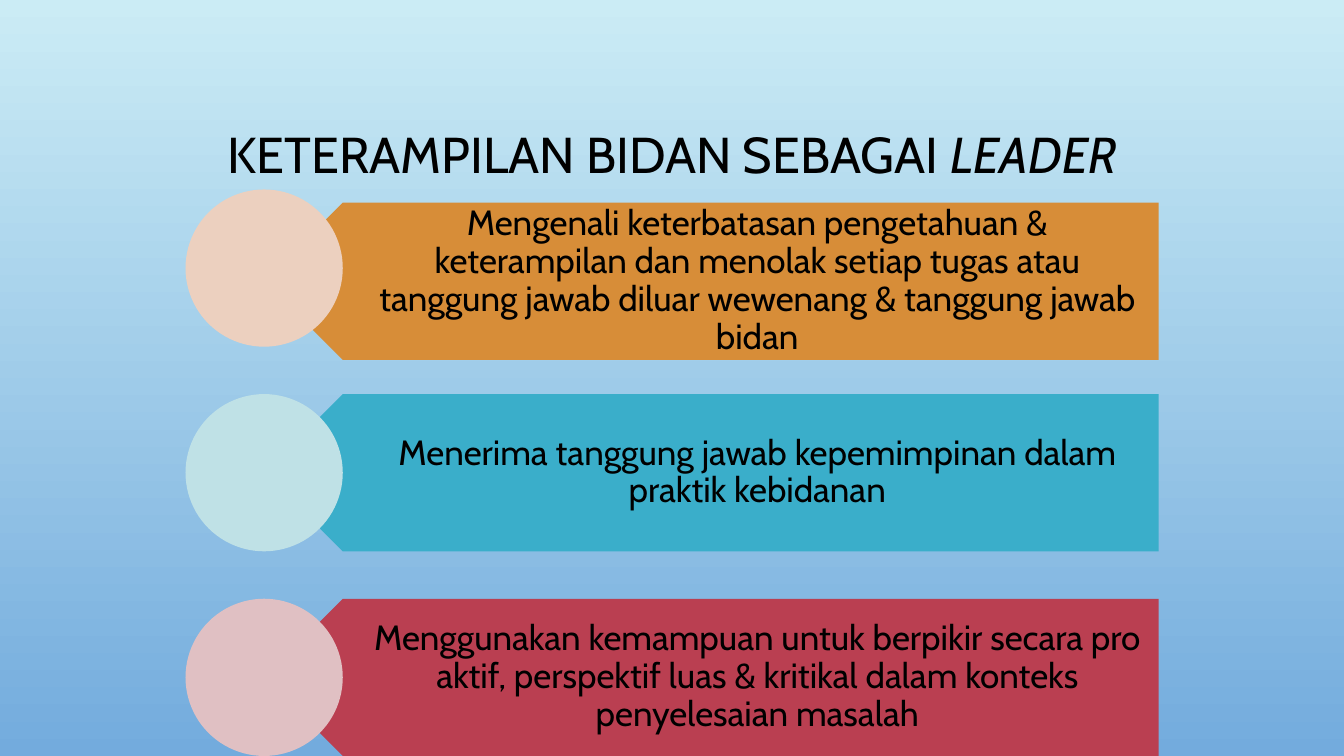
from pptx import Presentation
from pptx.dml.color import RGBColor
from pptx.enum.shapes import MSO_SHAPE
from pptx.enum.text import MSO_ANCHOR, MSO_AUTO_SIZE, PP_ALIGN
from pptx.util import Inches, Pt

FONT = "Cabin"
COLORS = {
    "text": "000000",
    "sky_top": "CBECF5", "sky_bottom": "73ABDD",
    "orange": "D78D38", "peach": "ECD0BF",
    "teal": "3AAECA", "mint": "BFE1E6",
    "red": "BA3F51", "rose": "E0C0C3",
}
TITLE = [("KETERAMPILAN BIDAN SEBAGAI", False), (" LEADER", True)]
# text, banner colour, circle colour, banner offset from its row
SKILLS = [
    ("Mengenali keterbatasan pengetahuan & keterampilan dan menolak setiap tugas "
     "atau tanggung jawab diluar wewenang & tanggung jawab bidan", "orange", "peach", 0.13),
    ("Menerima tanggung jawab kepemimpinan dalam praktik kebidanan", "teal", "mint", 0),
    ("Menggunakan kemampuan untuk berpikir secara pro aktif, perspektif luas & "
     "kritikal dalam konteks penyelesaian masalah", "red", "rose", 0),
]
ROW_TOP, ROW_PITCH, ROW_HEIGHT = 1.88, 2.03, 1.56
CIRCLE_LEFT, BANNER_LEFT, BANNER_WIDTH = 1.84, 2.62, 8.87
TEXT_LEFT, TEXT_WIDTH = 3.02, 8.48


def rgb(name):
    return RGBColor.from_string(COLORS[name])


def style_text(p, size):
    p.alignment = PP_ALIGN.CENTER
    p.line_spacing = 0.9
    for r in p.runs:
        r.font.name, r.font.size = FONT, Pt(size)
        r.font.color.rgb = rgb("text")


def add_shape(slide, kind, left, top, width, color):
    sp = slide.shapes.add_shape(kind, Inches(left), Inches(top), Inches(width), Inches(ROW_HEIGHT))
    sp.shadow.inherit = False
    sp.fill.solid()
    sp.fill.fore_color.rgb = rgb(color)
    sp.line.fill.background()
    return sp


def add_skill_text(slide, text, top):
    box = slide.shapes.add_textbox(Inches(TEXT_LEFT), Inches(top), Inches(TEXT_WIDTH), Inches(ROW_HEIGHT))
    tf = box.text_frame
    tf.word_wrap = True
    tf.vertical_anchor = MSO_ANCHOR.MIDDLE
    tf.margin_left, tf.margin_right = Inches(0.69), Inches(0.19)
    tf.margin_top = tf.margin_bottom = Inches(0.1)
    tf.text = text
    style_text(tf.paragraphs[0], 25)


def add_title(slide):
    title = slide.shapes.title
    title.left, title.top = Inches(1), Inches(0.68)
    title.width, title.height = Inches(11.33), Inches(1.75)
    tf = title.text_frame
    tf.auto_size = MSO_AUTO_SIZE.NONE
    tf.vertical_anchor = MSO_ANCHOR.MIDDLE
    p = tf.paragraphs[0]
    for text, italic in TITLE:
        r = p.add_run()
        r.text = text
        r.font.italic = italic
    style_text(p, 36)


def main():
    prs = Presentation()
    prs.slide_width, prs.slide_height = Inches(13.33), Inches(7.5)
    slide = prs.slides.add_slide(prs.slide_layouts[5])

    fill = slide.background.fill
    fill.gradient()
    fill.gradient_angle = 270
    for stop, color, position in zip(fill.gradient_stops, ("sky_top", "sky_bottom"), (0, 1)):
        stop.color.rgb = rgb(color)
        stop.position = position

    add_title(slide)
    for i, (text, banner_color, circle_color, offset) in enumerate(SKILLS):
        top = ROW_TOP + i * ROW_PITCH
        banner = add_shape(slide, MSO_SHAPE.PENTAGON, BANNER_LEFT, top + offset, BANNER_WIDTH, banner_color)
        banner.rotation = 180
        add_skill_text(slide, text, top + offset)
        add_shape(slide, MSO_SHAPE.OVAL, CIRCLE_LEFT, top, ROW_HEIGHT, circle_color)

    prs.save("out.pptx")


if __name__ == "__main__":
    main()
